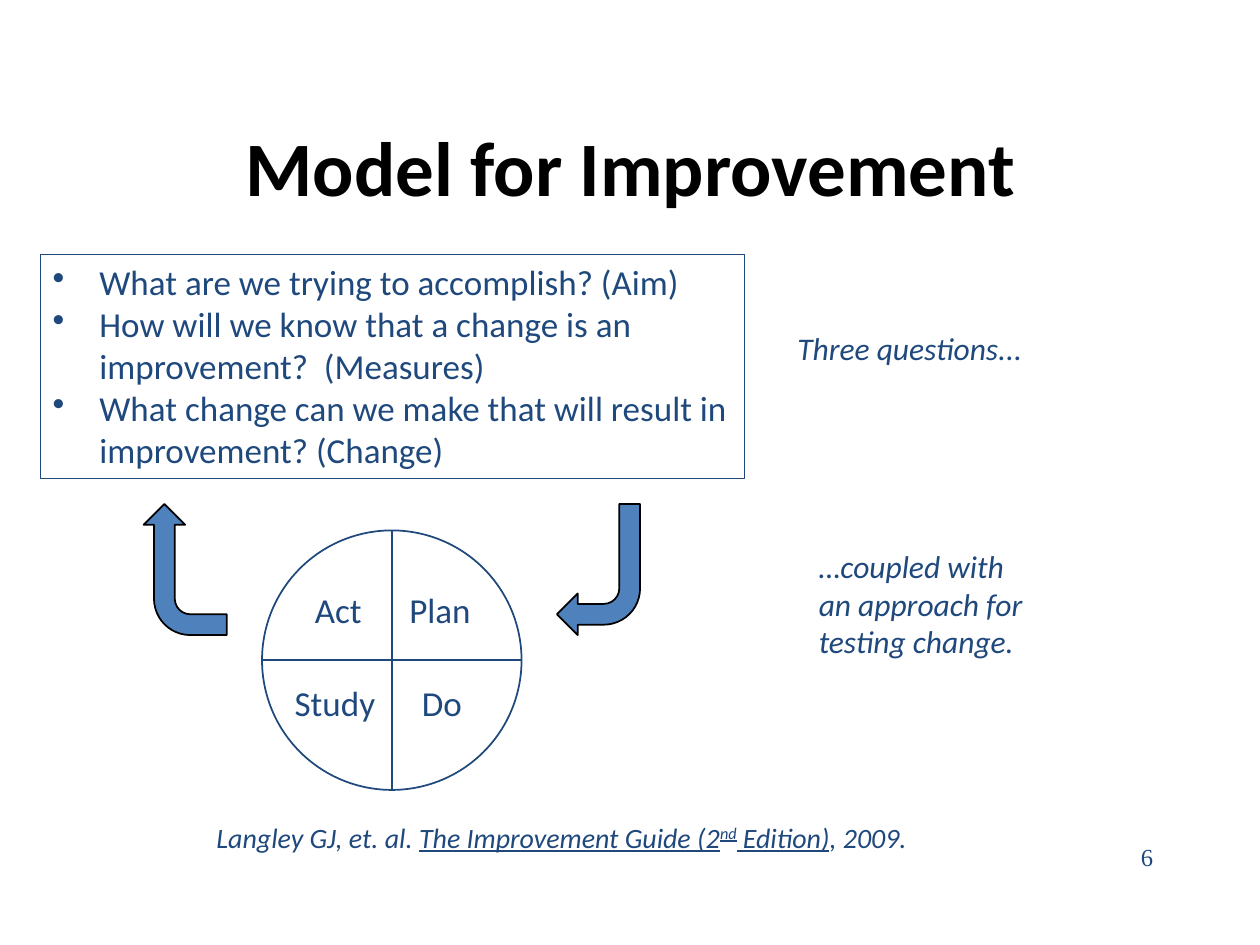
"""Build the Model for Improvement slide."""
from lxml import etree
from pptx import Presentation
from pptx.dml.color import RGBColor
from pptx.enum import shapes, text
from pptx.oxml import ns
from pptx.util import Inches, Pt

HUES = {"navy": "1F497D", "blue": "4F81BD", "black": "000000"}
BASE = {"name": "Calibri", "size": Pt(20), "hue": "navy"}
NOTE = {"size": Pt(18), "italic": True}
CITE = {"size": Pt(16), "italic": True}
KIND = shapes.MSO_SHAPE


class Deck:
    """Hold the style and the current slide."""

    def __init__(self, wide, high):
        self.prs = Presentation()
        self.prs.slide_width, self.prs.slide_height = Inches(wide), Inches(high)
        self.slide = self.prs.slides.add_slide(self.prs.slide_layouts[6])

    def hue(self, name):
        return RGBColor.from_string(HUES[name])

    def style(self, font, form):
        for key, value in form.items():
            if key == "hue":
                font.color.rgb = self.hue(value)
            else:
                setattr(font, key, value)

    def bullet(self, para):
        props = para._p.get_or_add_pPr()
        props.set("marL", str(Inches(0.37)))
        props.set("indent", str(-Inches(0.37)))
        etree.SubElement(props, ns.qn("a:buChar"), char="•")

    def fill_text(self, frame, lines, form=None, wrap=False, align="LEFT",
                  anchor="TOP", dots=False, grow=True):
        size = text.MSO_AUTO_SIZE
        frame.word_wrap = wrap
        frame.auto_size = size.SHAPE_TO_FIT_TEXT if grow else size.NONE
        frame.vertical_anchor = text.MSO_ANCHOR[anchor]
        for i, line in enumerate(lines):
            para = frame.add_paragraph() if i else frame.paragraphs[0]
            para.alignment = text.PP_ALIGN[align]
            if dots:
                self.bullet(para)
            for words, extra, rise in line if isinstance(line, list) else [(line, {}, 0)]:
                run = para.add_run()
                run.text = words
                self.style(run.font, {**BASE, **(form or {}), **extra})
                if rise:
                    run._r.get_or_add_rPr().set("baseline", str(rise * 1000))

    def label(self, box, lines, form=None, **opts):
        item = self.slide.shapes.add_textbox(*map(Inches, box))
        self.fill_text(item.text_frame, lines, form, **opts)

    def shape(self, kind, box, line, width, fill=None, turn=0):
        item = self.slide.shapes.add_shape(kind, *map(Inches, box))
        item.shadow.inherit = False
        item.rotation = turn
        item.line.color.rgb, item.line.width = self.hue(line), Pt(width)
        if fill:
            item.fill.solid()
            item.fill.fore_color.rgb = self.hue(fill)
        else:
            item.fill.background()
        return item

    def rule(self, *ends):
        item = self.slide.shapes.add_connector(
            shapes.MSO_CONNECTOR.STRAIGHT, *map(Inches, ends))
        item.line.color.rgb, item.line.width = self.hue("navy"), Pt(1)
        etree.SubElement(item._element.spPr, ns.qn("a:effectLst"))


def main():
    deck = Deck(10, 7.5)
    deck.label((0.73, 0.7, 8.55, 1.23), ["Model for Improvement"],
               {"size": Pt(44), "bold": True, "hue": "black"},
               wrap=True, align="CENTER", anchor="MIDDLE", grow=False)

    asks = deck.shape(KIND.RECTANGLE, (0.32, 2.02, 5.59, 1.78), "navy", 0.75)
    deck.fill_text(asks.text_frame, [
        "What are we trying to accomplish? (Aim)",
        "How will we know that a change is an improvement?  (Measures)",
        "What change can we make that will result in improvement? (Change)",
    ], wrap=True, dots=True)

    deck.label((6.23, 2.56, 2, 0.4), ["Three questions..."], NOTE)
    deck.label((6.4, 4.29, 1.83, 1.01),
               ["…coupled with", "an approach for", "testing change."], NOTE)

    left, top, size = 2.08, 4.21, 2.06
    mid, half = left + size / 2, top + size / 2
    deck.shape(KIND.OVAL, (left, top, size, size), "navy", 1)
    deck.rule(left, half, left + size, half)
    deck.rule(mid, top, mid, top + size)
    for word, x, y, wide in (("Plan", 3.15, 4.62, 0.69), ("Do", 3.25, 5.36, 0.52),
                             ("Study", 2.24, 5.36, 0.85), ("Act", 2.4, 4.62, 0.58)):
        deck.label((x, y, wide, 0.44), [word])

    for box, turn in (((4.42, 4, 0.66, 1.04), 180), ((0.95, 4.19, 1.04, 0.66), 270)):
        deck.shape(KIND.BENT_ARROW, box, "black", 1, "blue", turn)

    under = {"underline": True}
    deck.label((1.62, 6.46, 5.77, 0.37), [[
        ("Langley GJ, et. al. ", {}, 0),
        ("The Improvement Guide (2", under, 0),
        ("nd", under, 30),
        (" Edition)", under, 0),
        (", 2009.", {}, 0),
    ]], CITE)
    deck.label((7.17, 6.63, 2.08, 0.5), ["6"],
               {"name": "Times New Roman", "size": Pt(14)},
               wrap=True, align="RIGHT", grow=False)
    deck.prs.save("out.pptx")


if __name__ == "__main__":
    main()
